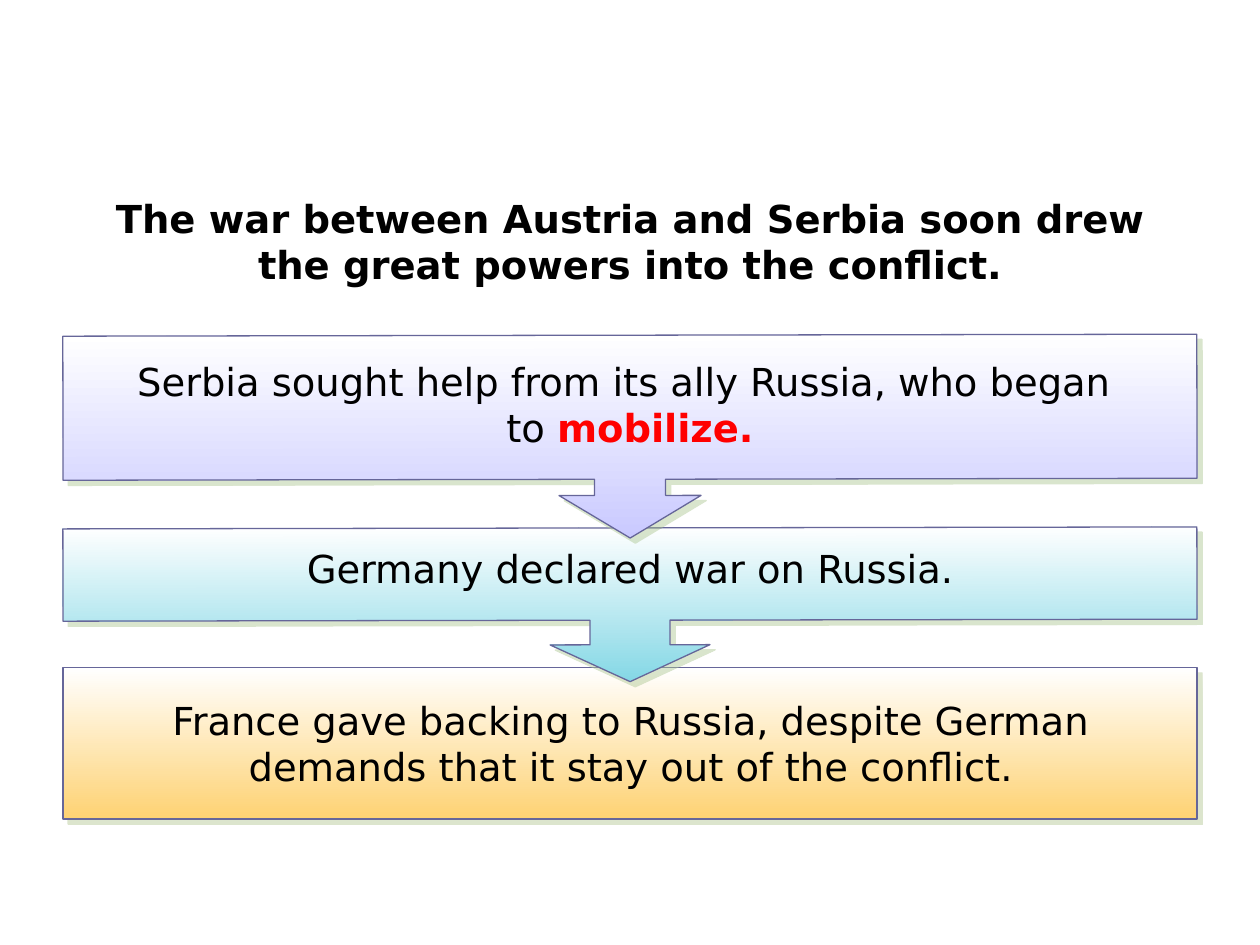
from lxml.etree import SubElement
from pptx import Presentation
from pptx.dml.color import RGBColor
from pptx.enum.shapes import MSO_SHAPE
from pptx.enum.text import PP_ALIGN
from pptx.oxml.ns import qn
from pptx.util import Emu, Inches, Pt

WIDTH, HEIGHT = Inches(10), Inches(7.5)
COLUMN, ROW = WIDTH / 10, HEIGHT / 7.5
FONT, TEXT_SIZE = "DejaVu Sans", 22
BLACK, WHITE, RED, OUTLINE = "000000", "FFFFFF", "FF0000", "666699"
LEFT, SPAN = 0.5, 9


def colour(value):
    return RGBColor.from_string(value)


def grid(left, top, width, height):
    """Turn columns and rows into slide lengths."""
    return [Emu(round(length)) for length in
            (left * COLUMN, top * ROW, width * COLUMN, height * ROW)]


def format_run(run, font_colour=BLACK, bold=False):
    run.font.name = FONT
    run.font.size = Pt(TEXT_SIZE)
    run.font.color.rgb = colour(font_colour)
    run.font.bold = bold


def add_text(slide, place, text, bold=False, space_after=0):
    """Add a centred, wrapping text box and return its paragraph."""
    text_frame = slide.shapes.add_textbox(*grid(*place)).text_frame
    text_frame.word_wrap = True
    paragraph = text_frame.paragraphs[0]
    paragraph.text = text
    paragraph.alignment = PP_ALIGN.CENTER
    paragraph.space_after = Pt(space_after)
    for run in paragraph.runs:
        format_run(run, bold=bold)
    return paragraph


def add_shadow(shape, shadow_colour):
    """Give the shape a hard shadow to the lower right."""
    shape.shadow.inherit = False
    effects = shape._element.spPr.find(qn("a:effectLst"))
    shadow = SubElement(effects, qn("a:outerShdw"), blurRad="0", dist=str(Pt(4.2)),
                        dir=str(45 * 60000), algn="ctr", rotWithShape="0")
    shade = SubElement(shadow, qn("a:srgbClr"), val=shadow_colour)
    SubElement(shade, qn("a:alpha"), val="46000")


def add_panel(slide, kind, top, height, gradient, shadow_colour):
    """Add a full-width panel with a vertical gradient."""
    shape = slide.shapes.add_shape(kind, *grid(LEFT, top, SPAN, height))
    shape.fill.gradient()
    shape.fill.gradient_angle = 270
    for stop, value in zip(shape.fill.gradient_stops, gradient):
        stop.color.rgb = colour(value)
    for stop, position in zip(shape.fill.gradient_stops, (0, 1)):
        stop.position = position
    shape.line.color.rgb = colour(OUTLINE)
    shape.line.width = Pt(0.75)
    add_shadow(shape, shadow_colour)
    return shape


def add_down_callout(slide, top, height, tint, adjustments):
    """Add a callout turned over so that its arrow points down."""
    shape = add_panel(slide, MSO_SHAPE.UP_ARROW_CALLOUT, top, height,
                      (tint, WHITE), "ADC793")
    for index, value in enumerate(adjustments):
        shape.adjustments[index] = value
    shape.rotation = 179.9
    shape._element.spPr.xfrm.set("flipH", "1")


def main():
    presentation = Presentation()
    presentation.slide_width, presentation.slide_height = WIDTH, HEIGHT
    slide = presentation.slides.add_slide(presentation.slide_layouts[6])

    add_text(slide, (LEFT, 1.5, SPAN, 0.84),
             "The war between Austria and Serbia soon drew the great powers "
             "into the conflict.", bold=True)

    add_panel(slide, MSO_SHAPE.RECTANGLE, 5.3, 1.2, (WHITE, "FED273"), "B3C793")
    add_text(slide, (0.67, 5.48, 8.67, 0.93),
             "France gave backing to Russia, despite German demands that it "
             "stay out of the conflict.", space_after=6)

    add_down_callout(slide, 4.19, 1.22, "83D7E5", (0.52, 0.52, 0.24, 0.6))
    add_text(slide, (LEFT, 4.28, SPAN, 0.47), "Germany declared war on Russia.")

    add_down_callout(slide, 2.66, 1.61, "C9C9FF", (0.35, 0.35, 0.21, 0.71))
    mobilization = add_text(slide, (0.75, 2.79, 8.5, 1.06),
                            "Serbia sought help from its ally Russia, who began \vto ",
                            space_after=15.9)
    keyword = mobilization.add_run()
    keyword.text = "mobilize."
    format_run(keyword, RED, bold=True)

    presentation.save("out.pptx")


if __name__ == "__main__":
    main()
